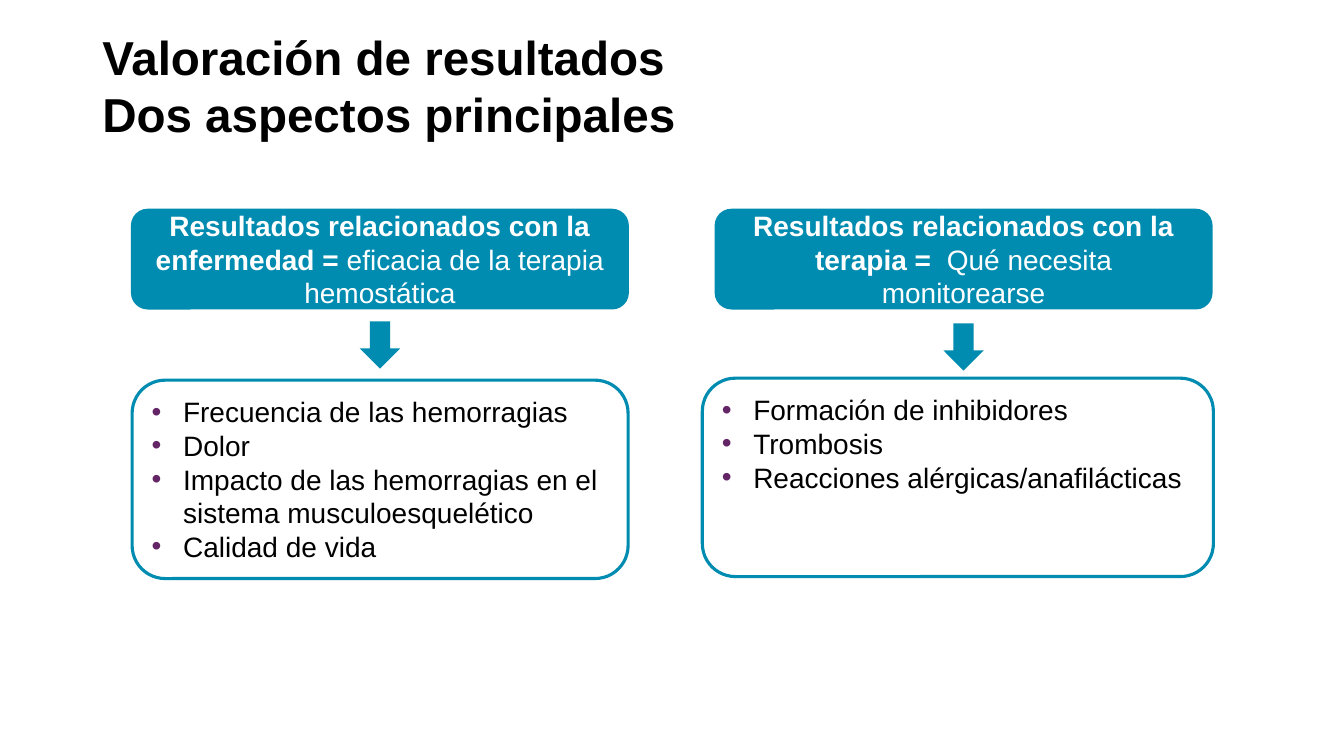
from lxml import etree
from pptx import Presentation
from pptx.dml.color import RGBColor
from pptx.enum.shapes import MSO_SHAPE
from pptx.enum.text import MSO_ANCHOR, PP_ALIGN
from pptx.oxml.ns import qn
from pptx.util import Cm, Pt

ROUNDED, DOWN_ARROW = MSO_SHAPE.ROUNDED_RECTANGLE, MSO_SHAPE.DOWN_ARROW
TOP, MIDDLE = MSO_ANCHOR.TOP, MSO_ANCHOR.MIDDLE
LEFT, CENTER = PP_ALIGN.LEFT, PP_ALIGN.CENTER

TEAL = RGBColor(0x00, 0x8B, 0xB0)
PURPLE = RGBColor(0x64, 0x25, 0x66)
BLACK = RGBColor(0, 0, 0)
WHITE = RGBColor(0xFF, 0xFF, 0xFF)
FONT = "Arial"

TITLE = ["Valoración de resultados", "Dos aspectos principales"]
# Places in cm; the second column's list is wider and sits slightly higher.
COLUMNS = [
    {
        "heading": ("Resultados relacionados con la enfermedad =",
                    " eficacia de la terapia hemostática"),
        "items": ["Frecuencia de las hemorragias",
                  "Dolor",
                  "Impacto de las hemorragias en el sistema musculoesquelético",
                  "Calidad de vida"],
        "left": 3.3, "arrow_top": 8.1,
        "list_left": 3.33, "list_top": 9.58, "list_width": 12.5,
    },
    {
        "heading": ("Resultados relacionados con la terapia = ",
                    " Qué necesita monitorearse"),
        "items": ["Formación de inhibidores",
                  "Trombosis",
                  "Reacciones alérgicas/anafilácticas"],
        "left": 18.01, "arrow_top": 8.15,
        "list_left": 17.7, "list_top": 9.53, "list_width": 12.88,
    },
]
HEADING_TOP, HEADING_WIDTH, HEADING_HEIGHT = 5.26, 12.55, 2.54
ARROW_WIDTH, ARROW_HEIGHT = 1.02, 1.19
LIST_HEIGHT = 5
INDENT = Cm(0.79)


def add_run(p, text, size, color, bold=False):
    r = p.add_run()
    r.text = text
    r.font.name, r.font.size, r.font.bold = FONT, Pt(size), bold
    r.font.color.rgb = color


def add_shape(slide, kind, left, top, width, height, filled=True):
    """Teal shape: solid without a line, or only outlined."""
    sp = slide.shapes.add_shape(kind, Cm(left), Cm(top), Cm(width), Cm(height))
    sp.shadow.inherit = False
    if filled:
        sp.fill.solid()
        sp.fill.fore_color.rgb = TEAL
        sp.line.fill.background()
    else:
        sp.fill.background()
        sp.line.color.rgb = TEAL
        sp.line.width = Pt(2.25)
    return sp


def add_bullet(p):
    pPr = p._p.get_or_add_pPr()
    pPr.set("marL", str(INDENT))
    pPr.set("indent", str(-INDENT))
    color = etree.SubElement(pPr, qn("a:buClr"))
    etree.SubElement(color, qn("a:srgbClr")).set("val", str(PURPLE))
    etree.SubElement(pPr, qn("a:buFont")).set("typeface", FONT)
    etree.SubElement(pPr, qn("a:buChar")).set("char", "•")


def add_title(slide):
    tf = slide.shapes.add_textbox(Cm(2.33), Cm(0.64), Cm(29.21), Cm(3.02)).text_frame
    tf.word_wrap = True
    tf.vertical_anchor = MIDDLE
    p = tf.paragraphs[0]
    for i, line in enumerate(TITLE):
        if i:
            p.add_line_break()
        add_run(p, line, 34, BLACK, bold=True)


def add_column(slide, col):
    sp = add_shape(slide, ROUNDED, col["left"], HEADING_TOP, HEADING_WIDTH, HEADING_HEIGHT)
    tf = sp.text_frame
    tf.word_wrap = True
    tf.vertical_anchor = MIDDLE
    p = tf.paragraphs[0]
    p.alignment = CENTER
    term, meaning = col["heading"]
    add_run(p, term, 20, WHITE, bold=True)
    add_run(p, meaning, 20, WHITE)

    arrow_left = col["left"] + (HEADING_WIDTH - ARROW_WIDTH) / 2
    add_shape(slide, DOWN_ARROW, arrow_left, col["arrow_top"], ARROW_WIDTH, ARROW_HEIGHT)

    sp = add_shape(slide, ROUNDED, col["list_left"], col["list_top"],
                   col["list_width"], LIST_HEIGHT, filled=False)
    tf = sp.text_frame
    tf.word_wrap = True
    tf.vertical_anchor = TOP
    for i, item in enumerate(col["items"]):
        p = tf.add_paragraph() if i else tf.paragraphs[0]
        p.alignment = LEFT
        add_bullet(p)
        add_run(p, item, 20, BLACK)


def main():
    prs = Presentation()
    prs.slide_width, prs.slide_height = Cm(33.87), Cm(19.05)
    slide = prs.slides.add_slide(prs.slide_layouts[6])
    add_title(slide)
    for col in COLUMNS:
        add_column(slide, col)
    prs.save("out.pptx")


if __name__ == "__main__":
    main()
